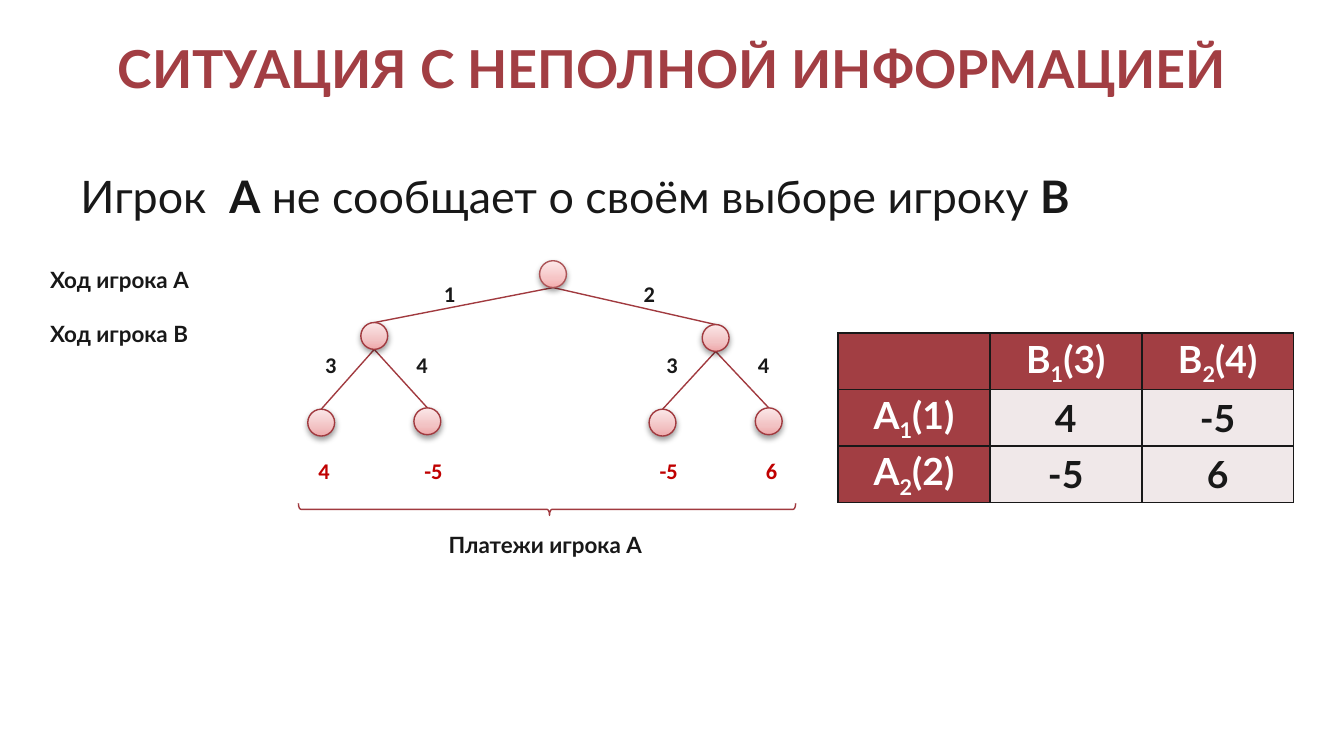
from dataclasses import dataclass

from lxml.etree import SubElement
from pptx import Presentation
from pptx.dml.color import RGBColor
from pptx.enum.shapes import MSO_CONNECTOR, MSO_SHAPE
from pptx.enum.text import MSO_ANCHOR, PP_ALIGN
from pptx.oxml import parse_xml
from pptx.oxml.ns import nsdecls, qn
from pptx.util import Inches, Pt

COLORS = {
    "accent": "A23E43",
    "line": "A13A3F",
    "root line": "AC5457",
    "ink": "181818",
    "payoff": "C00000",
    "white": "FFFFFF",
    "cell": "F0E8E9",
}
NODE_GRADIENT = ("EEA8AA", "F2C3C4", "FBE7E8")
ROOT_GRADIENT = ("F3ACAD", "F6C5C6", "FCE8E8")
COLUMNS, ROWS = 100, 56.25
CELL = Inches(10) / COLUMNS
NODE = 2


@dataclass
class Box:
    """A region measured in grid columns and rows."""

    left: float
    top: float
    width: float
    height: float

    def within(self, left, top, width, height):
        """Return a box placed relative to this one."""
        return Box(self.left + left, self.top + top, width, height)

    def lengths(self):
        """Return the four sides as slide lengths."""
        return [round(side * CELL) for side in (self.left, self.top, self.width, self.height)]


def rgb(name):
    """Look up a palette colour."""
    return RGBColor.from_string(COLORS[name])


def add_run(paragraph, text, size, font="Lato", color="ink", bold=True, baseline=0):
    """Add one formatted run to a paragraph."""
    run = paragraph.add_run()
    run.text = text
    run.font.name = font
    run.font.size = Pt(size)
    run.font.bold = bold
    run.font.color.rgb = rgb(color)
    if baseline:
        run.font._element.set("baseline", str(baseline * 1000))


def add_label(slide, box, text, size=12, wrap=True, **style):
    """Add a text box with one run and return its shape."""
    shape = slide.shapes.add_textbox(*box.lengths())
    shape.text_frame.word_wrap = wrap
    add_run(shape.text_frame.paragraphs[0], text, size, **style)
    return shape


def add_title(slide, box):
    """Place the centred heading."""
    shape = add_label(slide, box, "СИТУАЦИЯ С НЕПОЛНОЙ ИНФОРМАЦИЕЙ", 28, color="accent")
    shape.text_frame.vertical_anchor = MSO_ANCHOR.MIDDLE
    shape.text_frame.paragraphs[0].alignment = PP_ALIGN.CENTER


def add_statement(slide, box):
    """Place the sentence under the heading."""
    shape = add_label(slide, box, "Игрок  ", 24, bold=False)
    paragraph = shape.text_frame.paragraphs[0]
    add_run(paragraph, "А", 24)
    add_run(paragraph, " не сообщает о своём выборе игроку ", 24, bold=False)
    add_run(paragraph, "В", 24)


def add_moves(slide, box):
    """Place the captions of the two moves, one below the other."""
    for index, text in enumerate(("Ход игрока А", "Ход игрока B")):
        add_label(slide, box.within(0, index * 4, box.width, 3), text)


def add_node(slide, box, center, gradient=NODE_GRADIENT, line="line"):
    """Draw a shaded round node about a centre."""
    x, y = center
    place = box.within(x - NODE / 2, y - NODE / 2, NODE, NODE)
    shape = slide.shapes.add_shape(MSO_SHAPE.FLOWCHART_CONNECTOR, *place.lengths())
    shape.line.color.rgb = rgb(line)
    shape.line.width = Pt(0.75)
    stops = "".join(
        f'<a:gs pos="{share * 1000}"><a:srgbClr val="{color}"/></a:gs>'
        for share, color in zip((0, 35, 100), gradient)
    )
    fill = parse_xml(
        f'<a:gradFill {nsdecls("a")} rotWithShape="1"><a:gsLst>{stops}</a:gsLst>'
        '<a:lin ang="16200000" scaled="0"/></a:gradFill>'
    )
    shadow = parse_xml(
        f'<a:effectLst {nsdecls("a")}><a:outerShdw blurRad="{Pt(3.1)}" dist="{Pt(1.6)}" '
        'dir="5400000" rotWithShape="0"><a:srgbClr val="000000"><a:alpha val="38000"/>'
        "</a:srgbClr></a:outerShdw></a:effectLst>"
    )
    properties = shape._element.spPr
    properties.find(qn("a:prstGeom")).addnext(fill)
    properties.append(shadow)


def add_branch(slide, box, parent, child):
    """Join the bottom of a parent node to the top of a child node."""
    start = box.within(parent[0], parent[1] + NODE / 2, 0, 0).lengths()[:2]
    end = box.within(child[0], child[1] - NODE / 2, 0, 0).lengths()[:2]
    line = slide.shapes.add_connector(MSO_CONNECTOR.STRAIGHT, *start, *end)
    line.line.color.rgb = rgb("line")
    line.line.width = Pt(0.75)
    SubElement(line._element.spPr, qn("a:effectLst"))


def add_number(slide, box, left, top, text, color="ink"):
    """Place a move number or a payoff in a box as wide as its text."""
    place = box.within(left, top, 2.4 + 0.5 * len(text), 3)
    shape = add_label(slide, place, text, wrap=False, font="Calibri", color=color)
    shape.text_frame.paragraphs[0].alignment = PP_ALIGN.LEFT


def add_tree(slide, box):
    """Draw the game tree with its payoffs, brace and caption."""
    root = (18.95, 1)
    subtrees = (
        ((5.65, 5.6), "1", 9.85, ("4", "-5")),
        ((31.05, 5.75), "2", 24.7, ("-5", "6")),
    )
    leaf_rules = ((-3.95, 12.05, "3", -0.7), (3.95, 11.95, "4", -1.8))
    for child, move, move_left, payoffs in subtrees:
        add_branch(slide, box, root, child)
        add_number(slide, box, move_left, 0.95, move)
        for (shift, y, reply, reply_shift), payoff in zip(leaf_rules, payoffs):
            leaf = (child[0] + shift, y)
            add_branch(slide, box, child, leaf)
            add_node(slide, box, leaf)
            add_number(slide, box, leaf[0] + reply_shift, 6.25, reply)
            add_number(slide, box, leaf[0] - 1.2, 14.15, payoff, "payoff")
        add_node(slide, box, child)
    add_node(slide, box, root, ROOT_GRADIENT, "root line")

    place = box.within(box.width / 2 - 0.45, 18.5 - box.width / 2, 0.9, box.width)
    brace = slide.shapes.add_shape(MSO_SHAPE.RIGHT_BRACE, *place.lengths())
    brace.rotation = 90
    brace.adjustments[0], brace.adjustments[1] = 0.2, 0.495
    brace.adjustments[1] = 0.495
    brace.shadow.inherit = False
    brace.fill.background()
    brace.line.color.rgb = rgb("line")
    brace.line.width = Pt(0.75)
    add_label(slide, box.within(10.2, 19.65, 20.8, 3), "Платежи игрока А")


def style_cell(cell, fill):
    """Set the borders, fill, margins and alignment of a table cell."""
    properties = cell._tc.get_or_add_tcPr()
    for side in "LRTB":
        properties.append(parse_xml(
            f'<a:ln{side} {nsdecls("a")} w="{Pt(1)}"><a:solidFill>'
            f'<a:srgbClr val="{COLORS["ink"]}"/></a:solidFill></a:ln{side}>'
        ))
    cell.fill.solid()
    cell.fill.fore_color.rgb = rgb(fill)
    cell.margin_left = cell.margin_right = Inches(0.07)
    cell.margin_top = cell.margin_bottom = 0
    cell.vertical_anchor = MSO_ANCHOR.MIDDLE
    cell.text_frame.paragraphs[0].alignment = PP_ALIGN.CENTER


def add_payoff_table(slide, box):
    """Place the payoff matrix in equal cells."""
    rows = (
        ((), ("B", "1", "(3)"), ("B", "2", "(4)")),
        (("A", "1", "(1)"), ("4",), ("-5",)),
        (("A", "2", "(2)"), ("-5",), ("6",)),
    )
    table = slide.shapes.add_table(3, 3, *box.lengths()).table
    for row_index, row in enumerate(rows):
        for column_index, parts in enumerate(row):
            heading = row_index == 0 or column_index == 0
            cell = table.cell(row_index, column_index)
            style_cell(cell, "accent" if heading else "cell")
            for part, baseline in zip(parts, (0, -25, 0)):
                add_run(cell.text_frame.paragraphs[0], part, 20,
                        color="white" if heading else "ink", baseline=baseline)


def main():
    """Build the slide and save it."""
    presentation = Presentation()
    presentation.slide_width = round(COLUMNS * CELL)
    presentation.slide_height = round(ROWS * CELL)
    slide = presentation.slides.add_slide(presentation.slide_layouts[6])
    add_title(slide, Box(5, 1.5, 90, 7))
    add_statement(slide, Box(5, 12.1, 78.7, 5))
    add_moves(slide, Box(2.75, 19.3, 15, 7))
    add_tree(slide, Box(22.2, 19.4, 37, 22.6))
    add_payoff_table(slide, Box(62.35, 24.8, 33.9, 12.6))
    presentation.save("out.pptx")


if __name__ == "__main__":
    main()
